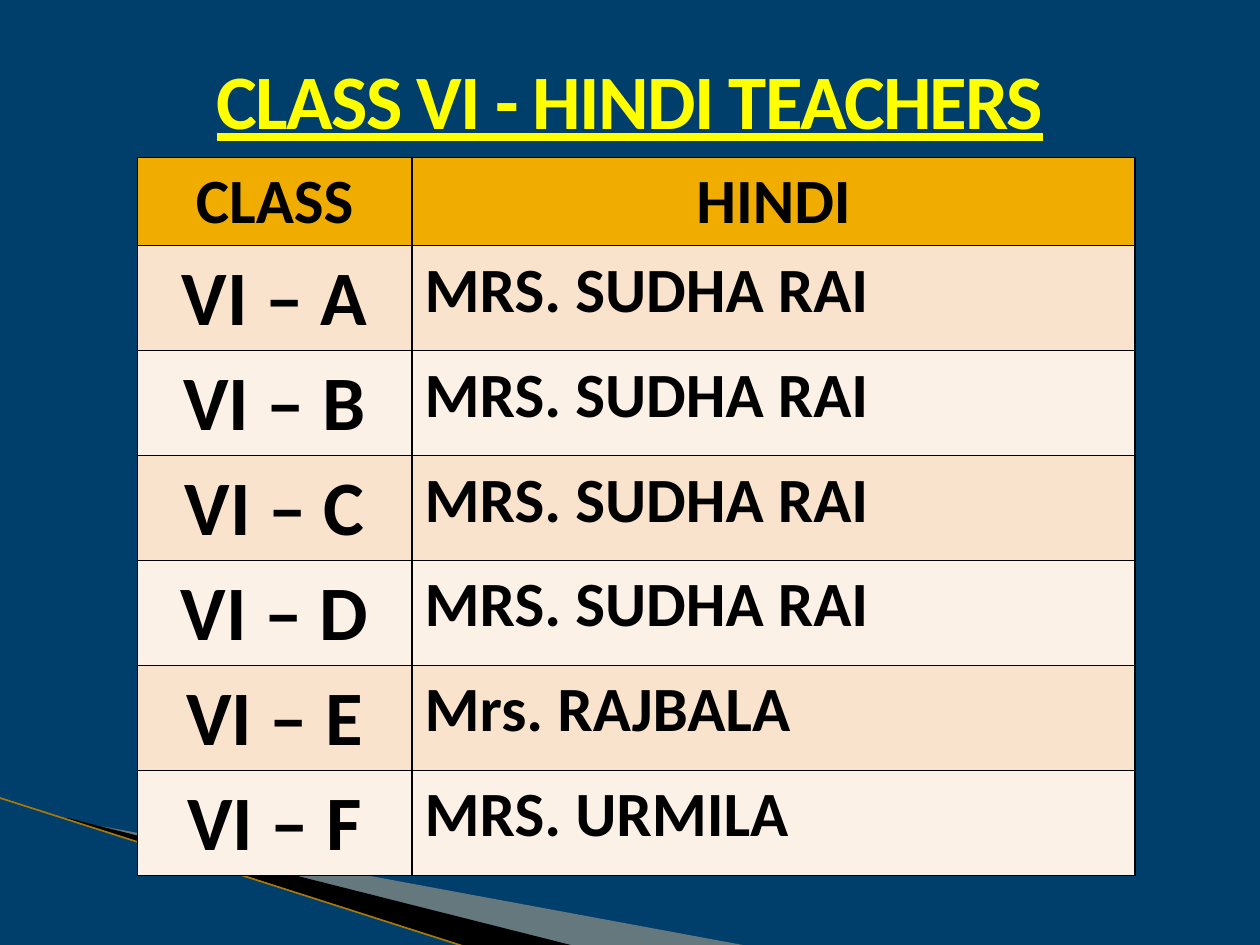
"""Build the Class VI Hindi teachers slide."""
from dataclasses import dataclass

from lxml.etree import SubElement
from pptx import Presentation
from pptx.dml.color import RGBColor
from pptx.enum.shapes import MSO_CONNECTOR
from pptx.enum.text import MSO_ANCHOR, PP_ALIGN
from pptx.oxml.ns import qn
from pptx.util import Inches, Pt

NAVY = RGBColor(0x00, 0x3E, 0x6C)
PEACH = RGBColor(0xFC, 0xCF, 0x9B)
GOLD_LINE = RGBColor(0xA8, 0x78, 0x08)
YELLOW = RGBColor(0xFF, 0xFF, 0x00)
BLACK = RGBColor(0x00, 0x00, 0x00)
HEADER = RGBColor(0xF0, 0xAD, 0x00)
BANDS = (RGBColor(0xFC, 0xF1, 0xE7), RGBColor(0xF9, 0xE3, 0xCC))
FONT = "Calibri"
HEADER_HEIGHT = 0.7
ROW_HEIGHT = 5 / 6


@dataclass(frozen=True)
class Wedge:
    frame: tuple[float, float, float, float]
    points: tuple[tuple[float, float], ...]
    color: RGBColor
    opacity: int = 100


@dataclass(frozen=True)
class Teacher:
    section: str
    name: str


WEDGES = (
    Wedge(
        (0.78, 5.47, 4.16, 1.58),
        ((0.55, 6.51), (5.95, 7.51), (4.56, 7.51), (0.55, 6.5)),
        PEACH,
        40,
    ),
    Wedge(
        (-0.06, 6.33, 4.16, 0.92),
        ((0.53, 6.49), (4.57, 7.51), (3.72, 7.52), (0.54, 6.5)),
        BLACK,
    ),
)
TEACHERS = (
    Teacher("A", "MRS. SUDHA RAI"),
    Teacher("B", "MRS. SUDHA RAI"),
    Teacher("C", "MRS. SUDHA RAI"),
    Teacher("D", "MRS. SUDHA RAI"),
    Teacher("E", "Mrs. RAJBALA"),
    Teacher("F", "MRS. URMILA"),
)


def add_run(p, text: str, size: int, color: RGBColor):
    r = p.add_run()
    r.text = text
    r.font.name = FONT
    r.font.size = Pt(size)
    r.font.bold = True
    r.font.color.rgb = color
    return r


def set_frame(sp, frame: tuple[float, float, float, float]) -> None:
    left, top, width, height = (Inches(value) for value in frame)
    dx, dy = sp.left - left, sp.top - top
    outline = next(sp._element.iter(qn("a:path")))
    outline.set("w", str(width))
    outline.set("h", str(height))
    for pt in outline.iter(qn("a:pt")):
        pt.set("x", str(int(pt.get("x")) + dx))
        pt.set("y", str(int(pt.get("y")) + dy))
    sp.left, sp.top, sp.width, sp.height = left, top, width, height


def add_wedge(s, wedge: Wedge) -> None:
    points = [(Inches(x), Inches(y)) for x, y in wedge.points]
    builder = s.shapes.build_freeform(*points[0])
    builder.add_line_segments(points[1:])
    sp = builder.convert_to_shape()
    set_frame(sp, wedge.frame)
    sp.shadow.inherit = False
    sp.fill.solid()
    sp.fill.fore_color.rgb = wedge.color
    sp.line.fill.background()
    if wedge.opacity < 100:
        color = sp._element.spPr.find(f"{qn('a:solidFill')}/{qn('a:srgbClr')}")
        SubElement(color, qn("a:alpha"), val=str(wedge.opacity * 1000))


def add_edge_line(s) -> None:
    line = s.shapes.add_connector(
        MSO_CONNECTOR.STRAIGHT, Inches(-0.01), Inches(6.33), Inches(3.71), Inches(7.52)
    )
    line.line.color.rgb = GOLD_LINE
    line.line.width = Pt(0.95)
    SubElement(line._element.spPr, qn("a:effectLst"))


def add_title(s, text: str) -> None:
    tf = s.shapes.add_textbox(0, 0, Inches(10), Inches(1.21)).text_frame
    tf.word_wrap = True
    p = tf.paragraphs[0]
    p.alignment = PP_ALIGN.CENTER
    p.line_spacing = 1.5
    pPr = p._p.get_or_add_pPr()
    pPr.set("marL", str(Inches(0.38)))
    pPr.set("indent", str(Inches(-0.38)))
    r = add_run(p, text, 44, YELLOW)
    r.font.underline = True
    r._r.get_or_add_rPr().set("spc", "-100")


def set_borders(cell) -> None:
    tcPr = cell._tc.get_or_add_tcPr()
    for i, side in enumerate(("a:lnL", "a:lnR", "a:lnT", "a:lnB")):
        ln = tcPr.makeelement(qn(side), {"w": str(Pt(1))})
        SubElement(SubElement(ln, qn("a:solidFill")), qn("a:srgbClr"), val=str(BLACK))
        tcPr.insert(i, ln)


def fill_cell(cell, text: str, size: int, align: PP_ALIGN, fill: RGBColor) -> None:
    cell.fill.solid()
    cell.fill.fore_color.rgb = fill
    cell.margin_top, cell.margin_bottom = Inches(0.05), Inches(0.03)
    cell.vertical_anchor = MSO_ANCHOR.TOP
    p = cell.text_frame.paragraphs[0]
    p.alignment = align
    add_run(p, text, size, BLACK)
    set_borders(cell)


def add_teacher_table(s, teachers: tuple[Teacher, ...]) -> None:
    height = HEADER_HEIGHT + ROW_HEIGHT * len(teachers)
    table = s.shapes.add_table(
        len(teachers) + 1, 2, Inches(1.09), Inches(1.25), Inches(7.92), Inches(height)
    ).table
    for column, width in zip(table.columns, (2.18, 5.74)):
        column.width = Inches(width)
    table.rows[0].height = Inches(HEADER_HEIGHT)
    for col, label in enumerate(("CLASS", "HINDI")):
        fill_cell(table.cell(0, col), label, 36, PP_ALIGN.CENTER, HEADER)
    for row, teacher in enumerate(teachers, start=1):
        table.rows[row].height = Inches(ROW_HEIGHT)
        band = BANDS[row % 2]
        fill_cell(table.cell(row, 0), f"VI – {teacher.section}", 44, PP_ALIGN.CENTER, band)
        fill_cell(table.cell(row, 1), teacher.name, 36, PP_ALIGN.LEFT, band)


def main() -> None:
    prs = Presentation()
    prs.slide_width, prs.slide_height = Inches(10), Inches(7.5)
    s = prs.slides.add_slide(prs.slide_layouts[6])
    s.background.fill.solid()
    s.background.fill.fore_color.rgb = NAVY
    for wedge in WEDGES:
        add_wedge(s, wedge)
    add_edge_line(s)
    add_title(s, "CLASS VI - HINDI TEACHERS")
    add_teacher_table(s, TEACHERS)
    prs.save("out.pptx")


if __name__ == "__main__":
    main()
